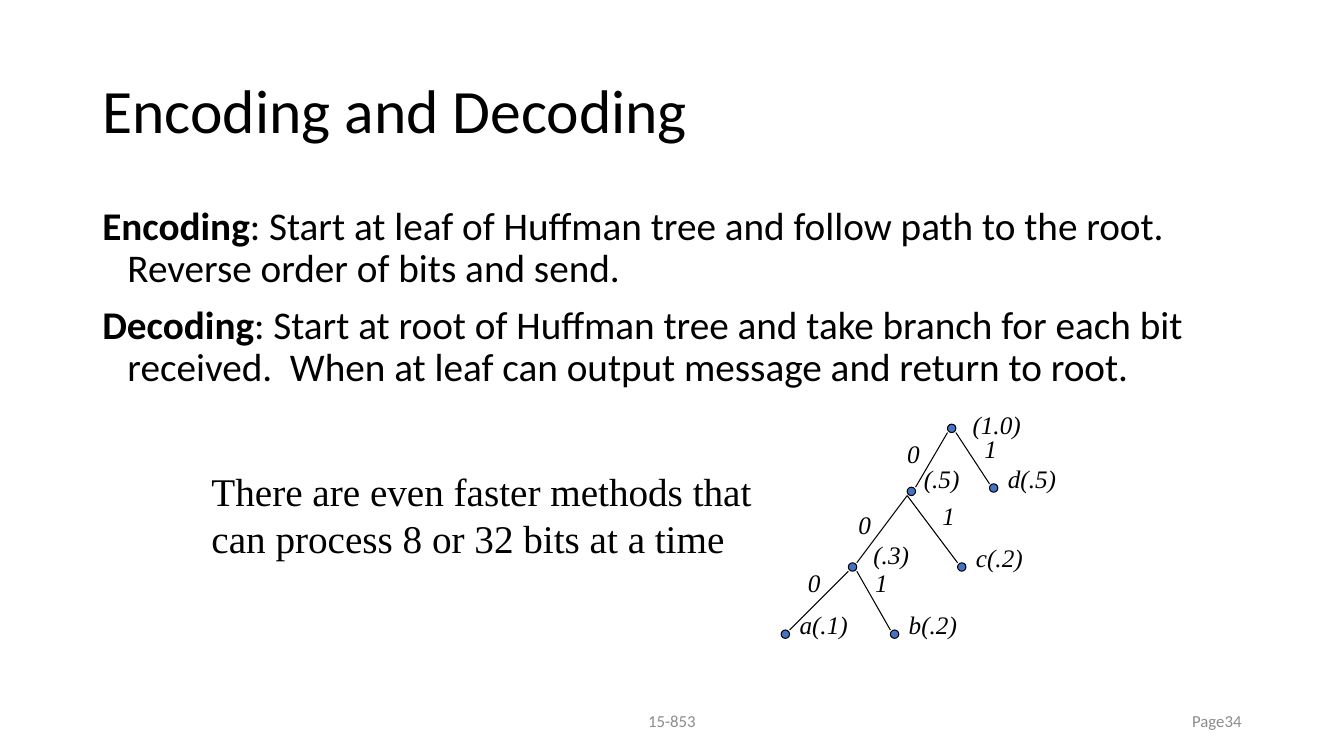
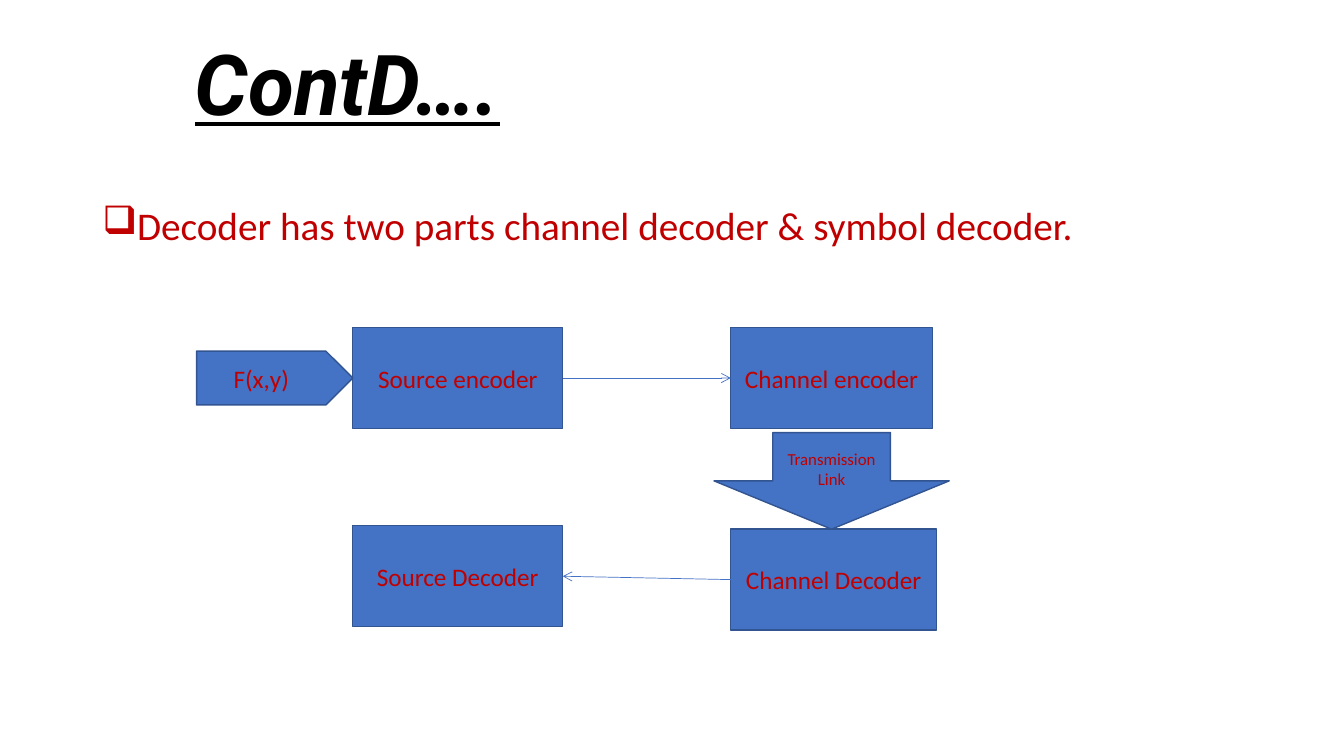
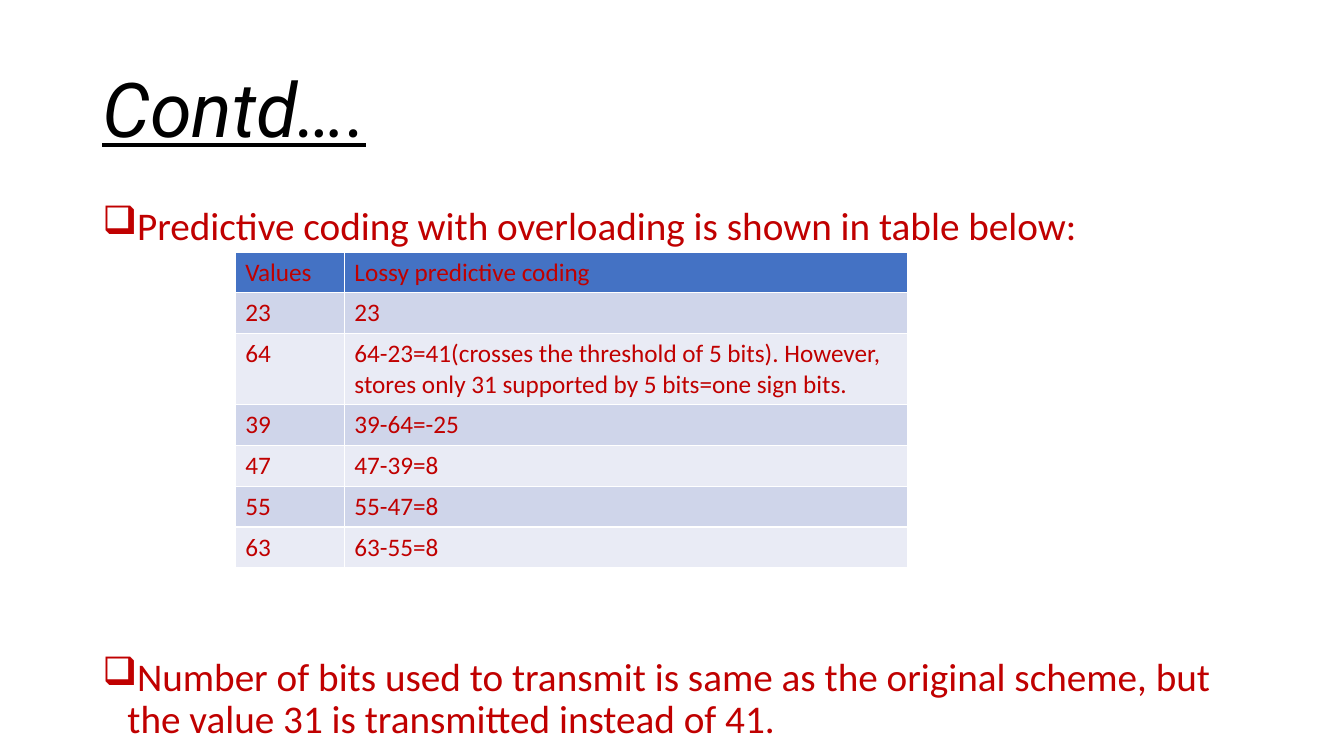
from dataclasses import dataclass
from pptx import Presentation
from pptx.dml.color import RGBColor as Rgb
from pptx.enum.shapes import MSO_CONNECTOR as Link, MSO_SHAPE as Form
from pptx.enum.text import MSO_ANCHOR as Anchor, MSO_AUTO_SIZE as Fit, PP_ALIGN as Align
from pptx.oxml.ns import qn
from pptx.oxml.xmlchemy import OxmlElement as Node
from pptx.util import Emu, Inches, Pt


@dataclass(frozen=True)
class Theme:
    ink: str = "000000"
    red: str = "C00000"
    blue: str = "4472C4"
    edge: str = "325491"
    gray: str = "8C8C8C"
    bands: tuple = ("E9EBF5", "CFD5EA")
    sans: str = "Calibri"
    head: str = "Roboto"
    serif: str = "Times New Roman"
    title: int = 44
    large: int = 54
    huge: int = 60
    body: int = 28
    label: int = 18
    small: int = 12


theme = Theme()
deck = Presentation()
cols, rows = 160, 90
deck.slide_width, deck.slide_height = Inches(40 / 3), Inches(7.5)
unit = deck.slide_width / cols


def at(*cells):
    return [Emu(round(cell * unit)) for cell in cells]


def style(frame, size, color, font=theme.sans, align=Align.LEFT, **marks):
    for para in frame.paragraphs:
        para.alignment = align
        for run in para.runs:
            run.font.size, run.font.name = Pt(size), font
            run.font.color.rgb = Rgb.from_string(color)
            for mark, value in marks.items():
                setattr(run.font, mark, value)


wide = (11, 4.8, 138, 17.4)
pages = [
    ("Encoding and Decoding", wide, theme.title, theme.sans, {}, theme.ink, [
        ("Encoding", ": Start at leaf of Huffman tree and follow path to the root. Reverse order of bits and send.", 10),
        ("Decoding", ": Start at root of Huffman tree and take branch for each bit received.  When at leaf can output message and return to root.", 10),
    ]),
    ("ContD….", (22, 3, 108, 15), theme.huge, theme.head,
     dict(bold=True, italic=True, underline=True), theme.red, [
        ("", "Decoder has two parts channel decoder & symbol decoder.", 10),
    ]),
    ("Contd….", wide, theme.large, theme.head,
     dict(italic=True, underline=True), theme.red, [
        ("", "Predictive coding with overloading is shown in table below:", 10),
        ("", "Number of bits used to transmit is same as the original scheme, but the value 31 is transmitted instead of 41.", 292),
    ]),
]
slides = []
for name, area, size, font, marks, color, items in pages:
    slide = deck.slides.add_slide(deck.slide_layouts[5])
    slides.append(slide)
    title = slide.shapes.title
    title.left, title.top, title.width, title.height = at(*area)
    frame = title.text_frame
    frame.text = name
    frame.auto_size, frame.vertical_anchor = Fit.NONE, Anchor.MIDDLE
    frame.paragraphs[0].line_spacing = 0.9
    style(frame, size, theme.ink, font, **marks)

    frame = slide.shapes.add_textbox(*at(11, 24, 138, 57)).text_frame
    frame.word_wrap = True
    for spot, (lead, rest, gap) in enumerate(items):
        para = frame.add_paragraph() if spot else frame.paragraphs[0]
        para.text = lead or rest
        if lead:
            para.runs[0].font.bold = True
            para.add_run().text = rest
        para.line_spacing, para.space_before = 0.9, Pt(gap)
        props = para._p.get_or_add_pPr()
        props.set("marL", str(Inches(0.25)))
        props.set("indent", str(-Inches(0.25)))
        if not lead:
            mark = Node("a:buChar")
            mark.set("char", "❑")
            props.append(mark)
    style(frame, theme.body, color)

tree, flow, grid = [slide.shapes for slide in slides]

for text, left, width, align in [
    ("15-853", 53, 54, Align.CENTER),
    ("Page34", 113, 36, Align.RIGHT),
]:
    frame = tree.add_textbox(*at(left, 83.4, width, 4.8)).text_frame
    frame.text = text
    frame.word_wrap, frame.vertical_anchor = True, Anchor.MIDDLE
    style(frame, theme.small, theme.gray, align=align)

dots = {
    "(1.0)": (112.8, 50.5, 1.8, -2.4),
    "(.5)": (108, 58, 0.8, -3.4),
    "(.3)": (101, 67, 1.8, -3.4),
    "a(.1)": (93, 75, 1, -3),
    "b(.2)": (106, 75, 1, -3),
    "c(.2)": (114, 67, 1, -3),
    "d(.5)": (117.8, 57.6, 1, -3),
}
edges = [
    ("(1.0)", "(.5)", 0, 112.8, 106.8, 51.6),
    ("(1.0)", "d(.5)", 1, 113.8, 116, 51),
    ("(.5)", "(.3)", 0, 108, 101, 60),
    ("(.5)", "c(.2)", 1, 108, 111, 59),
    ("(.3)", "a(.1)", 0, 101, 95, 67),
    ("(.3)", "b(.2)", 1, 102, 103, 67),
]
tags = []
for text, (col, row, right, down) in dots.items():
    dot = tree.add_shape(Form.OVAL, *at(col, row, 1, 1))
    dot.shadow.inherit = False
    dot.fill.solid()
    dot.fill.fore_color.rgb = Rgb.from_string(theme.blue)
    dot.line.color.rgb = Rgb.from_string(theme.ink)
    dot.line.width = Pt(0.75)
    tags.append((text, col + right, row + down))
for top, low, bit, start, col, row in edges:
    ends = at(start, dots[top][1] + 1, dots[low][0] + 1 - bit, dots[low][1])
    line = tree.add_connector(Link.STRAIGHT, *ends)
    line.line.color.rgb = Rgb.from_string(theme.ink)
    line.line.width = Pt(0.75)
    tags.append((str(bit), col, row))
spans = {1: 4, 4: 6.7, 5: 8.3}
for text, col, row in tags:
    frame = tree.add_textbox(*at(col, row, spans[len(text)], 4.8)).text_frame
    frame.text = text
    frame.word_wrap, frame.auto_size = False, Fit.SHAPE_TO_FIT_TEXT
    style(frame, theme.label, theme.ink, theme.serif, italic=True)

frame = tree.add_textbox(*at(24, 55, 67.2, 12.4)).text_frame
frame.text = "There are even faster methods that can process 8 or 32 bits at a time"
frame.word_wrap = True
style(frame, theme.body, theme.ink, theme.serif)

boxes = {}
for text, form, area, size in [
    ("Source encoder", Form.RECTANGLE, (42, 39, 25, 12), theme.label),
    ("Channel encoder", Form.RECTANGLE, (87, 39, 24, 12), theme.label),
    ("Source Decoder", Form.RECTANGLE, (42, 62.6, 25, 12), theme.label),
    ("Channel Decoder", Form.RECTANGLE, (87, 63, 24.5, 12), theme.label),
    ("F(x,y)", Form.RIGHT_ARROW, (23.4, 41.8, 18.6, 6.4), theme.label),
    ("Transmission Link", Form.DOWN_ARROW, (85, 51.5, 28, 11.5), theme.small),
]:
    box = boxes[text] = flow.add_shape(form, *at(*area))
    box.shadow.inherit = False
    box.fill.solid()
    box.fill.fore_color.rgb = Rgb.from_string(theme.blue)
    box.line.color.rgb = Rgb.from_string(theme.edge)
    box.line.width = Pt(1)
    box.text_frame.text = text
    box.text_frame.word_wrap = True
    box.text_frame.vertical_anchor = Anchor.MIDDLE
    style(box.text_frame, size, theme.red, align=Align.CENTER)
boxes["F(x,y)"].adjustments[0] = 1

for tail, tip, out, into in [
    ("Source encoder", "Channel encoder", 3, 1),
    ("Channel Decoder", "Source Decoder", 1, 3),
]:
    line = flow.add_connector(Link.STRAIGHT, 0, 0, 0, 0)
    line.begin_connect(boxes[tail], out)
    line.end_connect(boxes[tip], into)
    line.line.color.rgb = Rgb.from_string(theme.blue)
    line.line.width = Pt(0.5)
    arrow = Node("a:tailEnd")
    arrow.set("type", "arrow")
    line._element.spPr.find(qn("a:ln")).append(arrow)

for shape in [*tree, *flow]:
    if shape._element.tag == qn("p:cxnSp"):
        shape._element.spPr.append(Node("a:effectLst"))

data = [
    ("Values", "Lossy predictive coding"),
    ("23", "23"),
    ("64", "64-23=41(crosses the threshold of 5 bits). However, stores only 31 supported by 5 bits=one sign bits."),
    ("39", "39-64=-25"),
    ("47", "47-39=8"),
    ("55", "55-47=8"),
    ("63", "63-55=8"),
]
table = grid.add_table(len(data), 2, *at(28, 30, 80, 4.87 * len(data))).table
for col, width in zip(table.columns, at(13, 67)):
    col.width = width
for row, texts in enumerate(data):
    for col, text in enumerate(texts):
        cell = table.cell(row, col)
        cell.text_frame.text = text
        cell.fill.solid()
        shade = theme.bands[row % 2] if row else theme.blue
        cell.fill.fore_color.rgb = Rgb.from_string(shade)
        style(cell.text_frame, theme.label, theme.red, bold=False)

deck.save("out.pptx")
